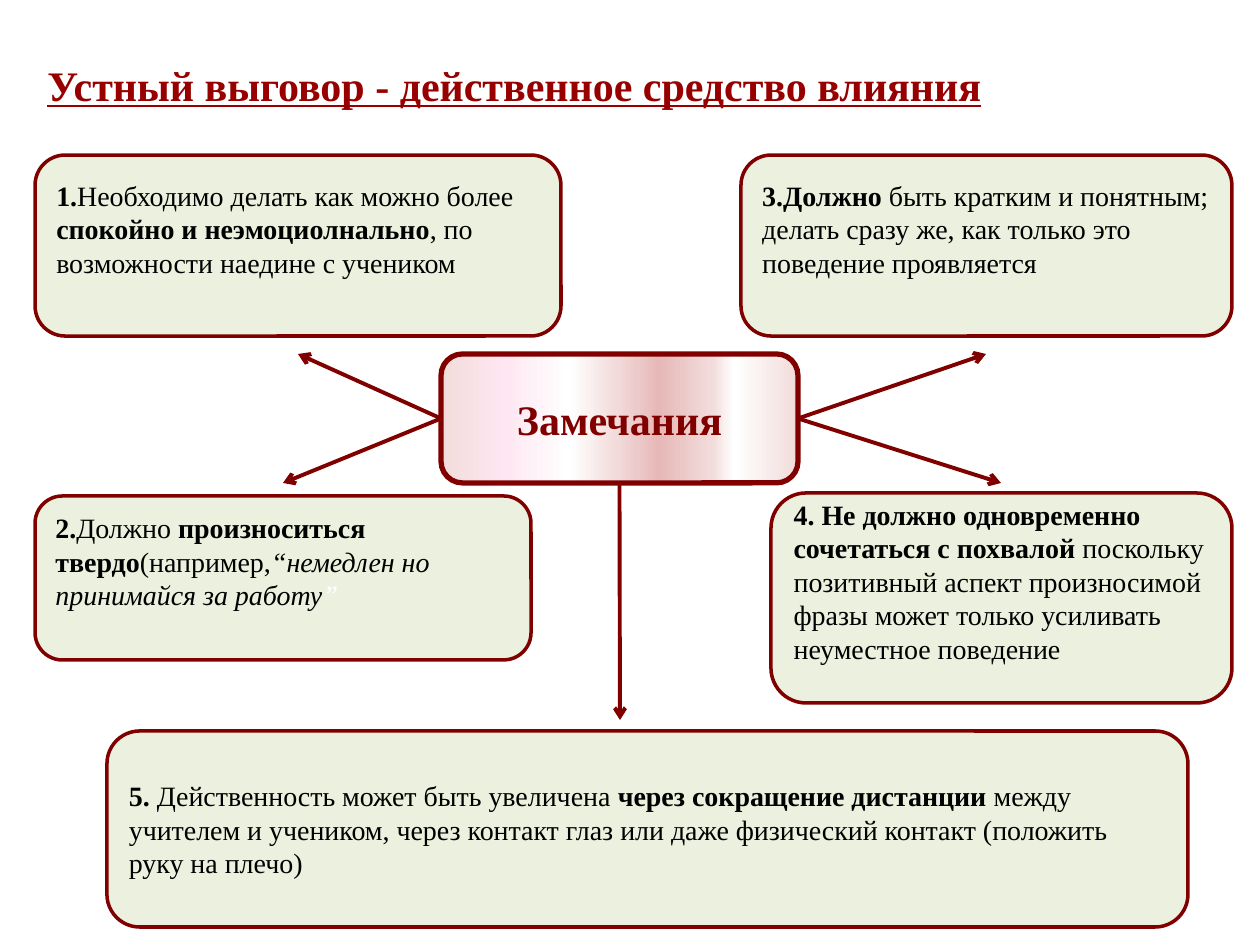
from dataclasses import dataclass

from lxml.etree import SubElement
from pptx import Presentation
from pptx.dml.color import RGBColor
from pptx.enum.shapes import MSO_CONNECTOR, MSO_SHAPE
from pptx.enum.text import MSO_ANCHOR, PP_ALIGN
from pptx.oxml.ns import qn
from pptx.util import Pt

EMU_PER_PX = 914400 / 126


def px(*lengths):
    return [round(length * EMU_PER_PX) for length in lengths]


@dataclass(frozen=True)
class Theme:
    font: str = "Times New Roman"
    title: str = "980000"
    accent: str = "800000"
    card: str = "EBF1DE"
    ink: str = "000000"
    white: str = "FFFFFF"
    heading_size: int = 24
    body_size: int = 16
    hub_line: float = 3
    card_line: float = 2
    arrow_line: float = 2.25
    hub_stops: tuple = (
        (0, "F2DCDB"), (18, "FEE7F2"), (36, "FFFFFF"),
        (49, "F2DCDB"), (55, "ECCAC9"), (61, "E6B9B8"),
        (76, "F2DCDB"), (82, "FFFFFF"), (100, "F2DCDB"),
    )


class SlideBuilder:
    def __init__(self, slide, theme):
        self.slide = slide
        self.theme = theme

    def style(self, run, size, color, bold=False, italic=False):
        font = run.font
        font.name, font.size = self.theme.font, Pt(size)
        font.bold, font.italic = bold, italic
        font.color.rgb = RGBColor.from_string(color)

    def title(self, text, box):
        frame = self.slide.shapes.add_textbox(*px(*box)).text_frame
        frame.word_wrap = True
        frame.text = text
        run = frame.paragraphs[0].runs[0]
        self.style(run, self.theme.heading_size, self.theme.title, bold=True)
        run.font.underline = True

    def rounded(self, box, line_width):
        shape = self.slide.shapes.add_shape(MSO_SHAPE.ROUNDED_RECTANGLE, *px(*box))
        shape.shadow.inherit = False
        shape.line.color.rgb = RGBColor.from_string(self.theme.accent)
        shape.line.width = Pt(line_width)
        shape.text_frame.word_wrap = True
        shape.text_frame.vertical_anchor = MSO_ANCHOR.MIDDLE
        return shape

    def hub(self, text, box):
        shape = self.rounded(box, self.theme.hub_line)
        shape.fill.gradient()
        shape.fill.gradient_angle = 0
        # Replace the two default gradient stops
        stops = shape.fill._xPr.find(qn("a:gradFill")).find(qn("a:gsLst"))
        for stop in list(stops):
            stops.remove(stop)
        for percent, color in self.theme.hub_stops:
            stop = SubElement(stops, qn("a:gs"), pos=str(percent * 1000))
            SubElement(stop, qn("a:srgbClr"), val=color)
        paragraph = shape.text_frame.paragraphs[0]
        paragraph.text = text
        paragraph.alignment = PP_ALIGN.CENTER
        self.style(paragraph.runs[0], self.theme.heading_size, self.theme.accent, bold=True)
        return shape

    def card(self, box, segments, bottom_inset):
        """Segments are (text, style) pairs: b bold, i italic, w white."""
        shape = self.rounded(box, self.theme.card_line)
        shape.fill.solid()
        shape.fill.fore_color.rgb = RGBColor.from_string(self.theme.card)
        shape.text_frame.margin_bottom = px(bottom_inset)[0]
        paragraph = shape.text_frame.paragraphs[0]
        paragraph.alignment = PP_ALIGN.LEFT
        for text, marks in segments:
            run = paragraph.add_run()
            run.text = text
            color = self.theme.white if "w" in marks else self.theme.ink
            self.style(run, self.theme.body_size, color, "b" in marks, "i" in marks)

    def arrow(self, source, side, tip):
        connector = self.slide.shapes.add_connector(
            MSO_CONNECTOR.STRAIGHT, *px(*tip), *px(*tip))
        connector.begin_connect(source, side)
        connector.line.color.rgb = RGBColor.from_string(self.theme.accent)
        connector.line.width = Pt(self.theme.arrow_line)
        SubElement(connector.line._get_or_add_ln(), qn("a:tailEnd"), type="arrow")
        SubElement(connector._element.spPr, qn("a:effectLst"))


BOTTOM, LEFT, RIGHT = 2, 1, 3
INSET, RAISED_INSET = 6, 40  # the raised text sits half a line above the middle

RULES = [
    ((35, 155, 526, 181), RAISED_INSET, [
        ("1.", "b"), ("Необходимо делать как можно более ", ""),
        ("спокойно и неэмоциолнально", "b"),
        (", по возможности наедине с учеником", "")]),
    ((35, 496, 496, 164), RAISED_INSET, [
        ("2.", "b"), ("Должно ", ""), ("произноситься твердо", "b"),
        ("(например,", ""), ("“немедлен но принимайся за работу", "i"), ("”", "iw")]),
    ((741, 155, 491, 181), RAISED_INSET, [
        ("3.Должно ", "b"),
        ("быть кратким и понятным; делать сразу же, как только это "
         "поведение проявляется", "")]),
    ((771, 493, 461, 210), RAISED_INSET, [
        ("4. Не должно одновременно сочетаться с похвалой ", "b"),
        ("поскольку позитивный аспект произносимой фразы может только "
         "усиливать неуместное поведение", "")]),
    ((107, 731, 1081, 196), INSET, [
        ("5. ", "b"), ("Действенность может быть увеличена ", ""),
        ("через сокращение дистанции ", "b"),
        ("между учителем и учеником, через контакт глаз или даже физический "
         "контакт (положить руку на плечо)", "")]),
]

ARROWS = [
    (LEFT, (298, 354)), (LEFT, (283, 483)),
    (RIGHT, (986, 354)), (RIGHT, (1001, 483)),
    (BOTTOM, (620, 720)),
]


def main():
    presentation = Presentation()
    presentation.slide_width, presentation.slide_height = px(1260, 945)
    slide = presentation.slides.add_slide(presentation.slide_layouts[6])
    builder = SlideBuilder(slide, Theme())

    # Title and central topic
    builder.title("Устный выговор - действенное средство влияния", (35, 53, 1012, 102))
    remarks = builder.hub("Замечания", (441, 354, 357, 129))

    # Five rules around the topic
    for box, bottom_inset, segments in RULES:
        builder.card(box, segments, bottom_inset)

    # Arrows from the topic to the rules
    for side, tip in ARROWS:
        builder.arrow(remarks, side, tip)

    presentation.save("out.pptx")


if __name__ == "__main__":
    main()
